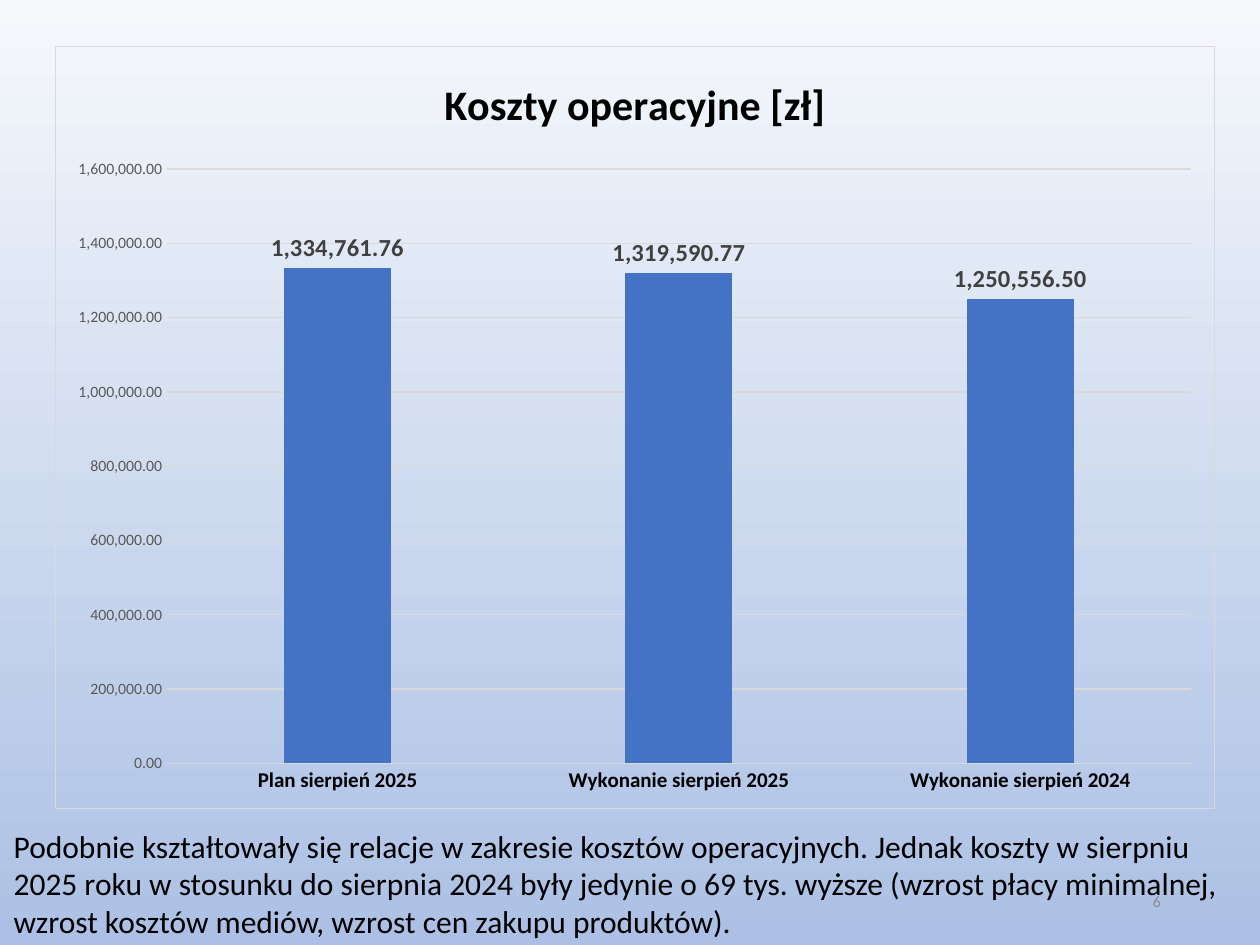
from dataclasses import dataclass

from lxml.etree import fromstring
from pptx import Presentation
from pptx.chart.data import CategoryChartData
from pptx.dml.color import RGBColor
from pptx.enum.chart import XL_CHART_TYPE, XL_LABEL_POSITION, XL_TICK_MARK
from pptx.enum.text import MSO_ANCHOR, MSO_AUTO_SIZE, PP_ALIGN
from pptx.util import Pt

FONT = "Calibri"
NUMBER_FORMAT = "#,##0.00"
BLACK = RGBColor(0x00, 0x00, 0x00)
DARK_GREY = RGBColor(0x40, 0x40, 0x40)
AXIS_GREY = RGBColor(0x59, 0x59, 0x59)
PAGE_GREY = RGBColor(0x8C, 0x8C, 0x8C)
RULE_GREY = RGBColor(0xD9, 0xD9, 0xD9)
BAR_BLUE = RGBColor(0x44, 0x72, 0xC4)
BG_TOP = RGBColor(0xF6, 0xF8, 0xFC)
BG_BOTTOM = RGBColor(0xAB, 0xC0, 0xE4)


@dataclass
class TextItem:
    lines: list[str]
    left: float
    top: float
    width: float
    height: float
    size: float
    color: RGBColor
    align: PP_ALIGN = PP_ALIGN.LEFT
    anchor: MSO_ANCHOR = MSO_ANCHOR.TOP
    wrap: bool = True
    auto_size: MSO_AUTO_SIZE = MSO_AUTO_SIZE.NONE


COSTS = {
    "Plan sierpień 2025": 1334761.76,
    "Wykonanie sierpień 2025": 1319590.77,
    "Wykonanie sierpień 2024": 1250556.50,
}

TEXTS = [
    TextItem(["6"], 508.5, 500.5, 162, 28.8, 9, PAGE_GREY,
             align=PP_ALIGN.RIGHT, anchor=MSO_ANCHOR.MIDDLE),
    TextItem([
        "Podobnie kształtowały się relacje w zakresie kosztów operacyjnych. Jednak koszty w sierpniu",
        "2025 roku w stosunku do sierpnia 2024 były jedynie o 69 tys. wyższe (wzrost płacy minimalnej,",
        "wzrost kosztów mediów, wzrost cen zakupu produktów).",
    ], 0.7, 468.8, 714.2, 72.7, 18, BLACK,
        wrap=False, auto_size=MSO_AUTO_SIZE.SHAPE_TO_FIT_TEXT),
]


def set_font(font, size: float, color: RGBColor, bold: bool = False) -> None:
    font.name = FONT
    font.size = Pt(size)
    font.bold = bold
    font.color.rgb = color


def set_line(line, color: RGBColor) -> None:
    line.color.rgb = color
    line.width = Pt(0.75)


def add_text(s, item: TextItem) -> None:
    sp = s.shapes.add_textbox(Pt(item.left), Pt(item.top),
                              Pt(item.width), Pt(item.height))
    tf = sp.text_frame
    tf.text = "\n".join(item.lines)
    tf.word_wrap = item.wrap
    tf.auto_size = item.auto_size
    tf.vertical_anchor = item.anchor
    for p in tf.paragraphs:
        p.alignment = item.align
        for r in p.runs:
            set_font(r.font, item.size, item.color)


def add_frame(chart) -> None:
    """Give the chart area a thin border and no fill."""
    frame = fromstring(
        '<c:spPr xmlns:c="http://schemas.openxmlformats.org/drawingml/2006/chart"'
        ' xmlns:a="http://schemas.openxmlformats.org/drawingml/2006/main">'
        f'<a:noFill/><a:ln w="{Pt(0.75)}"><a:solidFill>'
        f'<a:srgbClr val="{RULE_GREY}"/></a:solidFill></a:ln></c:spPr>')
    chart.element.find("{*}chart").addnext(frame)


def add_cost_chart(s) -> None:
    data = CategoryChartData(number_format=NUMBER_FORMAT)
    data.categories = list(COSTS)
    data.add_series("Series 1", list(COSTS.values()))
    chart = s.shapes.add_chart(XL_CHART_TYPE.COLUMN_CLUSTERED, Pt(31.2), Pt(26.2),
                               Pt(663), Pt(436.2), data).chart
    set_font(chart.font, 10, BLACK)
    add_frame(chart)
    chart.has_legend = False

    # Title
    chart.has_title = True
    tf = chart.chart_title.text_frame
    tf.text = "Koszty operacyjne [zł]"
    set_font(tf.paragraphs[0].runs[0].font, 24, BLACK, bold=True)
    chart.chart_title.include_in_layout = False

    # Axes
    cat_axis, val_axis = chart.category_axis, chart.value_axis
    for axis in (cat_axis, val_axis):
        axis.major_tick_mark = axis.minor_tick_mark = XL_TICK_MARK.NONE
    set_font(cat_axis.tick_labels.font, 12, BLACK, bold=True)
    set_line(cat_axis.format.line, RULE_GREY)
    set_font(val_axis.tick_labels.font, 9, AXIS_GREY)
    val_axis.tick_labels.number_format = NUMBER_FORMAT
    val_axis.tick_labels.number_format_is_linked = False
    val_axis.minimum_scale = 0
    val_axis.format.line.fill.background()
    set_line(val_axis.major_gridlines.format.line, RULE_GREY)

    # Bars and their values
    plot = chart.plots[0]
    plot.gap_width = 219
    plot.overlap = -27
    plot.vary_by_categories = False
    series = plot.series[0]
    series.format.fill.solid()
    series.format.fill.fore_color.rgb = BAR_BLUE
    labels = series.data_labels
    labels.show_value = True
    labels.position = XL_LABEL_POSITION.OUTSIDE_END
    labels.number_format = NUMBER_FORMAT
    labels.number_format_is_linked = False
    set_font(labels.font, 14, DARK_GREY, bold=True)


def main() -> None:
    prs = Presentation()
    prs.slide_width, prs.slide_height = Pt(720), Pt(540)
    s = prs.slides.add_slide(prs.slide_layouts[6])

    # Background, light at the top
    fill = s.background.fill
    fill.gradient()
    fill.gradient_angle = 270
    for stop, color in zip(fill.gradient_stops, (BG_TOP, BG_BOTTOM)):
        stop.color.rgb = color

    # Page number, chart, comment
    page_number, comment = TEXTS
    add_text(s, page_number)
    add_cost_chart(s)
    add_text(s, comment)
    prs.save("out.pptx")


if __name__ == "__main__":
    main()
